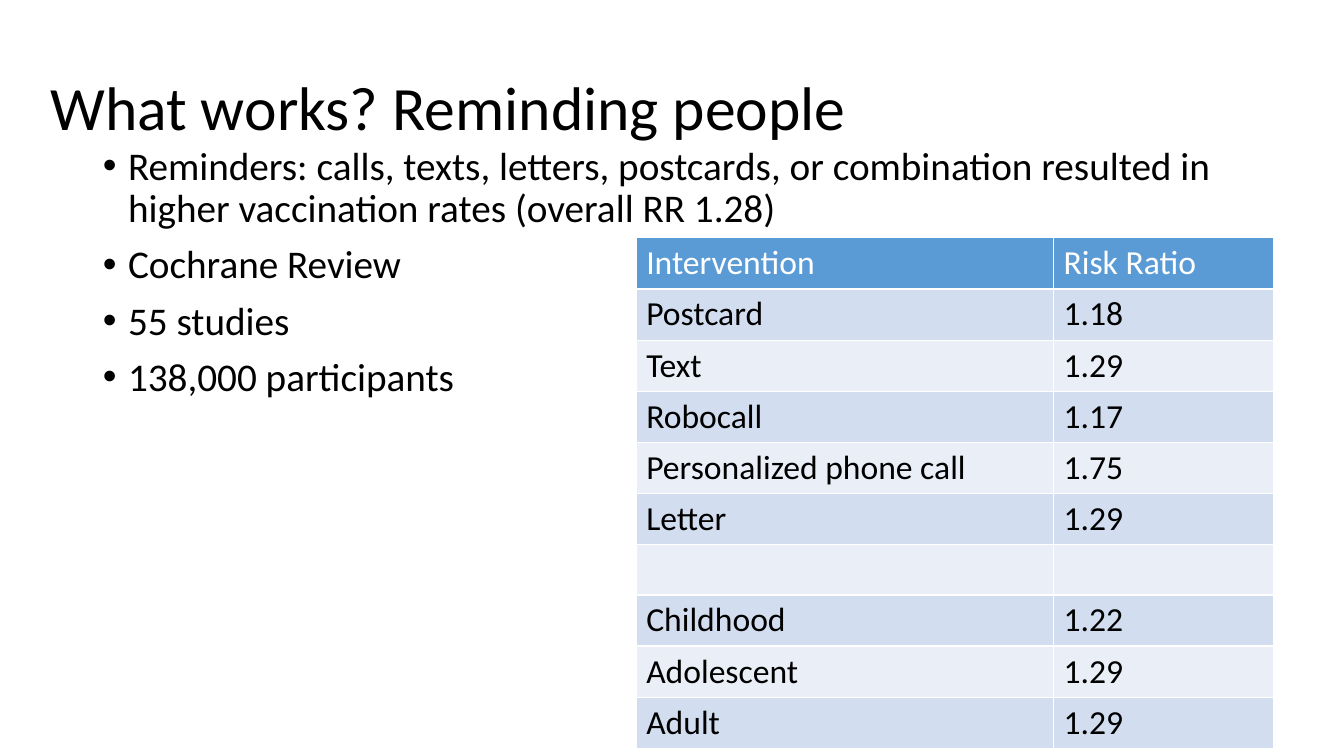
from lxml import etree
from pptx import Presentation
from pptx.dml.color import RGBColor
from pptx.enum.text import MSO_ANCHOR, MSO_AUTO_SIZE, PP_ALIGN
from pptx.oxml.ns import qn
from pptx.util import Inches, Pt

LEFT = PP_ALIGN.LEFT
TOP, MIDDLE = MSO_ANCHOR.TOP, MSO_ANCHOR.MIDDLE
NO_AUTOFIT = MSO_AUTO_SIZE.NONE

BLACK, WHITE = "000000", "FFFFFF"
HEADER_BLUE = "5B9BD5"
BANDS = ["EAEFF7", "D2DEEF"]

REMINDER_POINTS = [
    "Reminders: calls, texts, letters, postcards, or combination resulted in "
    "higher vaccination rates (overall RR 1.28)",
    "Cochrane Review",
    "55 studies",
    "138,000 participants",
]
RISK_RATIOS = [
    ("Intervention", "Risk Ratio"),
    ("Postcard", "1.18"),
    ("Text", "1.29"),
    ("Robocall", "1.17"),
    ("Personalized phone call", "1.75"),
    ("Letter", "1.29"),
    ("", ""),
    ("Childhood", "1.22"),
    ("Adolescent", "1.29"),
    ("Adult", "1.29"),
]


def rgb(value):
    return RGBColor.from_string(value)


def write(paragraph, text, size, color):
    run = paragraph.add_run()
    run.text = text
    font_values = {"name": "Calibri", "size": Pt(size), "bold": False}
    for key, value in font_values.items():
        setattr(run.font, key, value)
    run.font.color.rgb = rgb(color)


prs = Presentation()
prs.slide_width, prs.slide_height = Inches(13.33), Inches(7.5)
slide = prs.slides.add_slide(prs.slide_layouts[1])
title, points = slide.placeholders

# Title and body placement
for placeholder, box, anchor in [
    (title, (0.4, 0.7, 12.02, 0.8), MIDDLE),
    (points, (0.92, 1.4, 11.5, 5.36), TOP),
]:
    for side, length in zip(("left", "top", "width", "height"), box):
        setattr(placeholder, side, Inches(length))
    frame_values = {"word_wrap": True, "auto_size": NO_AUTOFIT, "vertical_anchor": anchor}
    for key, value in frame_values.items():
        setattr(placeholder.text_frame, key, value)

# Title
heading = title.text_frame.paragraphs[0]
heading.alignment = LEFT
heading.line_spacing = 0.9
write(heading, "What works? Reminding people", 44, BLACK)

# Bulleted findings
for index, point in enumerate(REMINDER_POINTS):
    frame = points.text_frame
    paragraph = frame.add_paragraph() if index else frame.paragraphs[0]
    properties = paragraph._p.get_or_add_pPr()
    properties.set("marL", str(Inches(0.25)))
    properties.set("indent", str(-Inches(0.25)))
    etree.SubElement(properties, qn("a:buFont"), typeface="Arial")
    etree.SubElement(properties, qn("a:buChar"), char="•")
    paragraph.line_spacing = 0.9
    paragraph.space_before = Pt(10 if index else 0)
    write(paragraph, point, 28, BLACK)

# Risk ratio table
row_height = 0.5
ratios = slide.shapes.add_table(
    len(RISK_RATIOS), 2, Inches(6.31), Inches(2.36),
    Inches(6.32), Inches(row_height * len(RISK_RATIOS))).table
ratios.first_row = ratios.horz_banding = False
for column, width in zip(ratios.columns, (4.14, 2.18)):
    column.width = Inches(width)

for row_index, entries in enumerate(RISK_RATIOS):
    for column_index, entry in enumerate(entries):
        cell = ratios.cell(row_index, column_index)
        is_header = row_index == 0
        cell.fill.solid()
        cell.fill.fore_color.rgb = rgb(HEADER_BLUE if is_header else BANDS[row_index % 2])
        if entry:
            write(cell.text_frame.paragraphs[0], entry, 24, WHITE if is_header else BLACK)

        # White cell borders, placed ahead of the fill
        cell_properties = cell._tc.get_or_add_tcPr()
        for position, edge in enumerate(("a:lnL", "a:lnR", "a:lnT", "a:lnB")):
            border = etree.Element(qn(edge), w=str(Pt(1)))
            border_fill = etree.SubElement(border, qn("a:solidFill"))
            etree.SubElement(border_fill, qn("a:srgbClr"), val=WHITE)
            cell_properties.insert(position, border)

prs.save("out.pptx")
